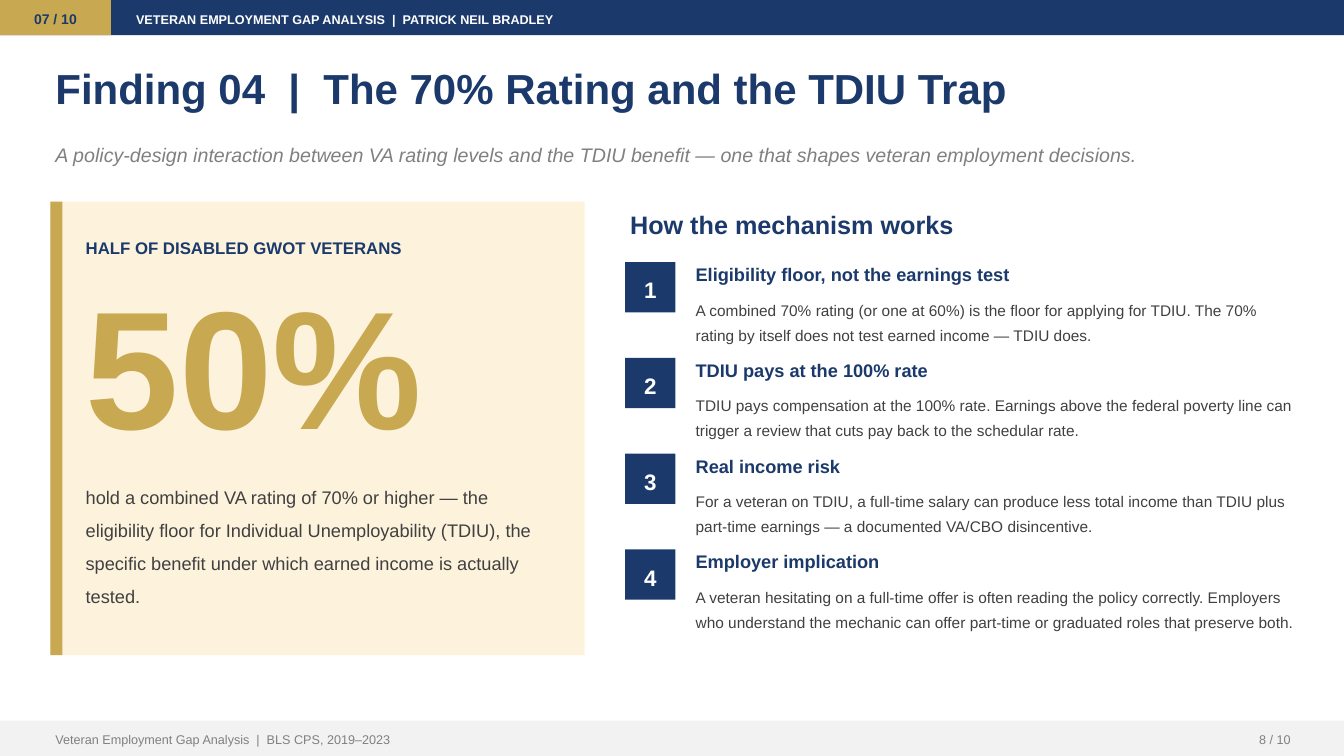
from pptx import Presentation
from pptx.dml.color import RGBColor
from pptx.enum.shapes import MSO_SHAPE
from pptx.enum.text import MSO_ANCHOR, MSO_AUTO_SIZE, PP_ALIGN
from pptx.util import Pt

NAVY, GOLD, CREAM, WHITE = "1B3A6B", "C8A951", "FDF3DC", "FFFFFF"
PALE, GRAY, DARK = "F2F2F2", "808080", "404040"

TAG = "07 / 10"
HEADER = "VETERAN EMPLOYMENT GAP ANALYSIS  |  PATRICK NEIL BRADLEY"
TITLE = "Finding 04  |  The 70% Rating and the TDIU Trap"
SUBTITLE = ("A policy-design interaction between VA rating levels and the TDIU "
            "benefit — one that shapes veteran employment decisions.")
LABEL = "HALF OF DISABLED GWOT VETERANS"
FIGURE = "50%"
CLAIM = ("hold a combined VA rating of 70% or higher — the eligibility floor for "
         "Individual Unemployability (TDIU), the specific benefit under which "
         "earned income is actually tested.")
HEADING = "How the mechanism works"
STEPS = [
    ("Eligibility floor, not the earnings test",
     "A combined 70% rating (or one at 60%) is the floor for applying for TDIU. "
     "The 70% rating by itself does not test earned income — TDIU does."),
    ("TDIU pays at the 100% rate",
     "TDIU pays compensation at the 100% rate. Earnings above the federal poverty "
     "line can trigger a review that cuts pay back to the schedular rate."),
    ("Real income risk",
     "For a veteran on TDIU, a full-time salary can produce less total income than "
     "TDIU plus part-time earnings — a documented VA/CBO disincentive."),
    ("Employer implication",
     "A veteran hesitating on a full-time offer is often reading the policy "
     "correctly. Employers who understand the mechanic can offer part-time or "
     "graduated roles that preserve both."),
]
SOURCE = "Veteran Employment Gap Analysis  |  BLS CPS, 2019–2023"
PAGE = "8 / 10"

PX = 9144  # 100 px to the inch
WIDE, HIGH, BAR = 1333, 750, 35
MARGIN, TOP = 50, 200
PANEL_W, PANEL_H = 530, 450
INNER, INNER_W = 80, 480
BADGE_X, BADGE, PITCH = 620, 50, 95
STEP_X, STEP_W = 685, 610
MIDDLE = MSO_ANCHOR.MIDDLE


def emu(*sizes):
    return [size * PX for size in sizes]


def color(value):
    return RGBColor.from_string(value)


def write(shape, text, size, ink, bold=False, italic=False, line=1.2,
          align=PP_ALIGN.LEFT, anchor=MSO_ANCHOR.TOP):
    frame = shape.text_frame
    frame.word_wrap = True
    frame.auto_size = MSO_AUTO_SIZE.NONE
    frame.vertical_anchor = anchor
    frame.margin_left, frame.margin_right = emu(5, 5)
    frame.margin_top, frame.margin_bottom = emu(2, 2)
    para = frame.paragraphs[0]
    para.alignment = align
    para.line_spacing = line
    run = para.add_run()
    run.text = text
    font = run.font
    font.name, font.size = "Arial", Pt(size)
    font.bold, font.italic = bold, italic
    font.color.rgb = color(ink)


def block(slide, box, fill):
    shape = slide.shapes.add_shape(MSO_SHAPE.RECTANGLE, *emu(*box))
    shape.shadow.inherit = False
    shape.fill.solid()
    shape.fill.fore_color.rgb = color(fill)
    shape.line.fill.background()
    return shape


def label(slide, box, *args, **style):
    write(slide.shapes.add_textbox(*emu(*box)), *args, **style)


def header(slide):
    block(slide, (0, 0, WIDE, BAR), NAVY)
    tag = block(slide, (0, 0, 110, BAR), GOLD)
    write(tag, TAG, 10, NAVY, bold=True, align=PP_ALIGN.CENTER, anchor=MIDDLE)
    label(slide, (130, 0, 1100, BAR), HEADER, 9, WHITE, bold=True, anchor=MIDDLE)
    title = slide.shapes.title
    title.left, title.top, title.width, title.height = emu(MARGIN, 55, 1230, 90)
    write(title, TITLE, 30, NAVY, bold=True, line=1.1)
    label(slide, (MARGIN, 135, 1230, 50), SUBTITLE, 14, GRAY, italic=True)


def panel(slide):
    block(slide, (MARGIN, TOP, PANEL_W, PANEL_H), CREAM)
    block(slide, (MARGIN, TOP, 12, PANEL_H), GOLD)
    label(slide, (INNER, 230, INNER_W, 50), LABEL, 12, NAVY, bold=True)
    label(slide, (INNER, 280, INNER_W, 180), FIGURE, 120, GOLD, bold=True, line=0.9)
    label(slide, (INNER, 470, INNER_W, 160), CLAIM, 13, DARK, line=1.5)


def steps(slide):
    label(slide, (BADGE_X, TOP, 670, 50), HEADING, 18, NAVY, bold=True)
    for index, (name, detail) in enumerate(STEPS):
        y = TOP + 60 + index * PITCH
        badge = block(slide, (BADGE_X, y, BADGE, BADGE), NAVY)
        write(badge, str(index + 1), 16, WHITE, bold=True,
              align=PP_ALIGN.CENTER, anchor=MIDDLE)
        label(slide, (STEP_X, y - 5, STEP_W, 35), name, 13, NAVY, bold=True)
        label(slide, (STEP_X, y + 30, STEP_W, 65), detail, 11, DARK, line=1.35)


def footer(slide):
    y = HIGH - BAR
    block(slide, (0, y, WIDE, BAR), PALE)
    label(slide, (MARGIN, y, 800, BAR), SOURCE, 9, GRAY, anchor=MIDDLE)
    label(slide, (1170, y, 115, BAR), PAGE, 9, GRAY,
          align=PP_ALIGN.RIGHT, anchor=MIDDLE)


def main():
    deck = Presentation()
    deck.slide_width, deck.slide_height = emu(WIDE, HIGH)
    slide = deck.slides.add_slide(deck.slide_layouts[5])
    for draw in (header, panel, steps, footer):
        draw(slide)
    deck.save("out.pptx")


if __name__ == "__main__":
    main()
